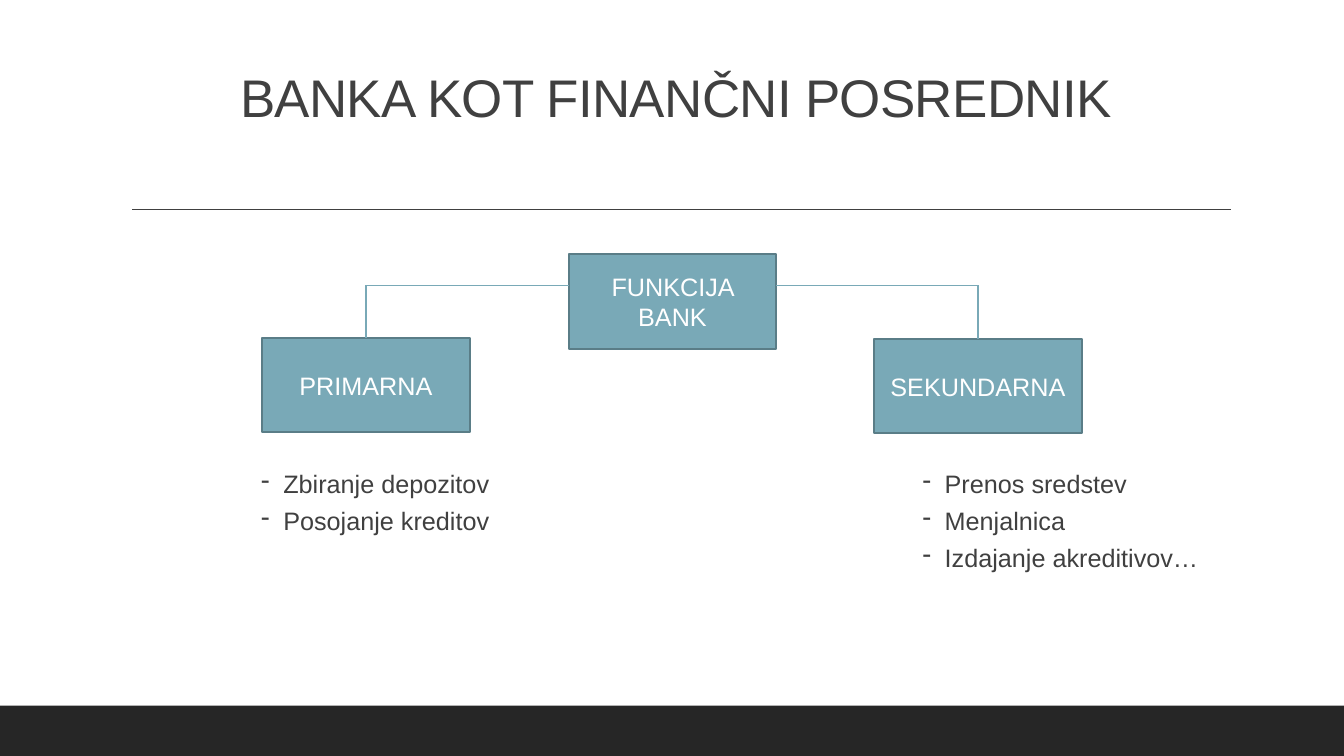
"""Build a slide showing the primary and secondary functions of a bank."""
import pptx
import pptx.dml.color
import pptx.enum.shapes
import pptx.enum.text
import pptx.oxml
import pptx.oxml.ns
import pptx.util
from pptx.util import Inches

DARK = pptx.dml.color.RGBColor(0x40, 0x40, 0x40)
FOOTER = pptx.dml.color.RGBColor(0x26, 0x26, 0x26)
TEAL = pptx.dml.color.RGBColor(0x79, 0xA9, 0xB7)
TEAL_EDGE = pptx.dml.color.RGBColor(0x5A, 0x7D, 0x87)
WHITE = pptx.dml.color.RGBColor(0xFF, 0xFF, 0xFF)
BOX_WIDTH, BOX_HEIGHT = 2.06, 0.94
BRANCH_TOP = 2.83


class SlideBuilder:
    """Hold the text style and the current slide."""

    font_name = "Arial"

    def __init__(self, slide):
        self.slide = slide

    def style(self, paragraph, color, size=18):
        paragraph.font.name = self.font_name
        paragraph.font.size = pptx.util.Pt(size)
        paragraph.font.color.rgb = color

    def rectangle(self, left, top, width, height, fill):
        shape = self.slide.shapes.add_shape(
            pptx.enum.shapes.MSO_SHAPE.RECTANGLE,
            Inches(left), Inches(top), Inches(width), Inches(height))
        shape.shadow.inherit = False
        shape.fill.solid()
        shape.fill.fore_color.rgb = fill
        shape.line.fill.background()
        return shape

    def box(self, left, top, text):
        shape = self.rectangle(left, top, BOX_WIDTH, BOX_HEIGHT, TEAL)
        shape.line.color.rgb = TEAL_EDGE
        shape.line.width = pptx.util.Pt(1.25)
        frame = shape.text_frame
        frame.word_wrap = True
        frame.vertical_anchor = pptx.enum.text.MSO_ANCHOR.MIDDLE
        paragraph = frame.paragraphs[0]
        paragraph.text = text
        paragraph.alignment = pptx.enum.text.PP_ALIGN.CENTER
        self.style(paragraph, WHITE)
        return shape

    def line(self, start, end, color):
        connector = self.slide.shapes.add_connector(
            pptx.enum.shapes.MSO_CONNECTOR.STRAIGHT,
            *(Inches(value) for value in (*start, *end)))
        connector.line.color.rgb = color
        connector.line.width = pptx.util.Pt(1)
        properties = connector.element.find(pptx.oxml.ns.qn("p:spPr"))
        properties.append(pptx.oxml.parse_xml(
            f"<a:effectLst {pptx.oxml.ns.nsdecls('a')}/>"))
        return connector

    def text_box(self, left, top, width, height):
        shape = self.slide.shapes.add_textbox(
            Inches(left), Inches(top), Inches(width), Inches(height))
        frame = shape.text_frame
        frame.word_wrap = True
        frame.margin_left = frame.margin_right = Inches(0)
        frame.margin_top = frame.margin_bottom = Inches(0)
        return shape

    def title(self, text):
        shape = self.text_box(1.2, 0.64, 11, 0.6)
        paragraph = shape.text_frame.paragraphs[0]
        paragraph.text = text
        paragraph.alignment = pptx.enum.text.PP_ALIGN.CENTER
        self.style(paragraph, DARK, 37.8)
        for defaults in shape.element.iter(pptx.oxml.ns.qn("a:defRPr")):
            defaults.set("spc", "-50")

    def dash_list(self, left, items):
        shape = self.text_box(left, 4.65, 3, 1.1)
        frame = shape.text_frame
        for index, item in enumerate(items):
            paragraph = frame.add_paragraph() if index else frame.paragraphs[0]
            paragraph.text = item
            paragraph.space_after = pptx.util.Pt(4.7)
            self.style(paragraph, DARK)
        for properties in shape.element.iter(pptx.oxml.ns.qn("a:pPr")):
            properties.set("marL", str(Inches(0.22)))
            properties.set("indent", str(-Inches(0.22)))
            bullet = pptx.oxml.parse_xml(
                f"<a:buChar {pptx.oxml.ns.nsdecls('a')} char='-'/>")
            properties.find(pptx.oxml.ns.qn("a:defRPr")).addprevious(bullet)


def main():
    presentation = pptx.Presentation()
    presentation.slide_width = Inches(13.33)
    presentation.slide_height = Inches(7.5)
    builder = SlideBuilder(
        presentation.slides.add_slide(presentation.slide_layouts[6]))

    builder.rectangle(0, 7, 13.33, 0.5, FOOTER)
    builder.line((1.31, 2.08), (12.21, 2.08), DARK)
    builder.title("BANKA KOT FINANČNI POSREDNIK")

    root_left = 5.64
    builder.box(root_left, 2.52, "FUNKCIJA BANK")
    branches = (
        ("PRIMARNA", 2.6, 3.35, root_left, 2.59,
         ("Zbiranje depozitov", "Posojanje kreditov")),
        ("SEKUNDARNA", 8.67, 3.36, root_left + BOX_WIDTH, 9.15,
         ("Prenos sredstev", "Menjalnica", "Izdajanje akreditivov…")),
    )
    for name, left, top, root_side, list_left, items in branches:
        box = builder.box(left, top, name)
        middle = left + BOX_WIDTH / 2
        drop = builder.line((middle, BRANCH_TOP), (middle, top), TEAL)
        drop.end_connect(box, 0)
        builder.line((middle, BRANCH_TOP), (root_side, BRANCH_TOP), TEAL)
        builder.dash_list(list_left, items)

    presentation.save("out.pptx")


if __name__ == "__main__":
    main()
